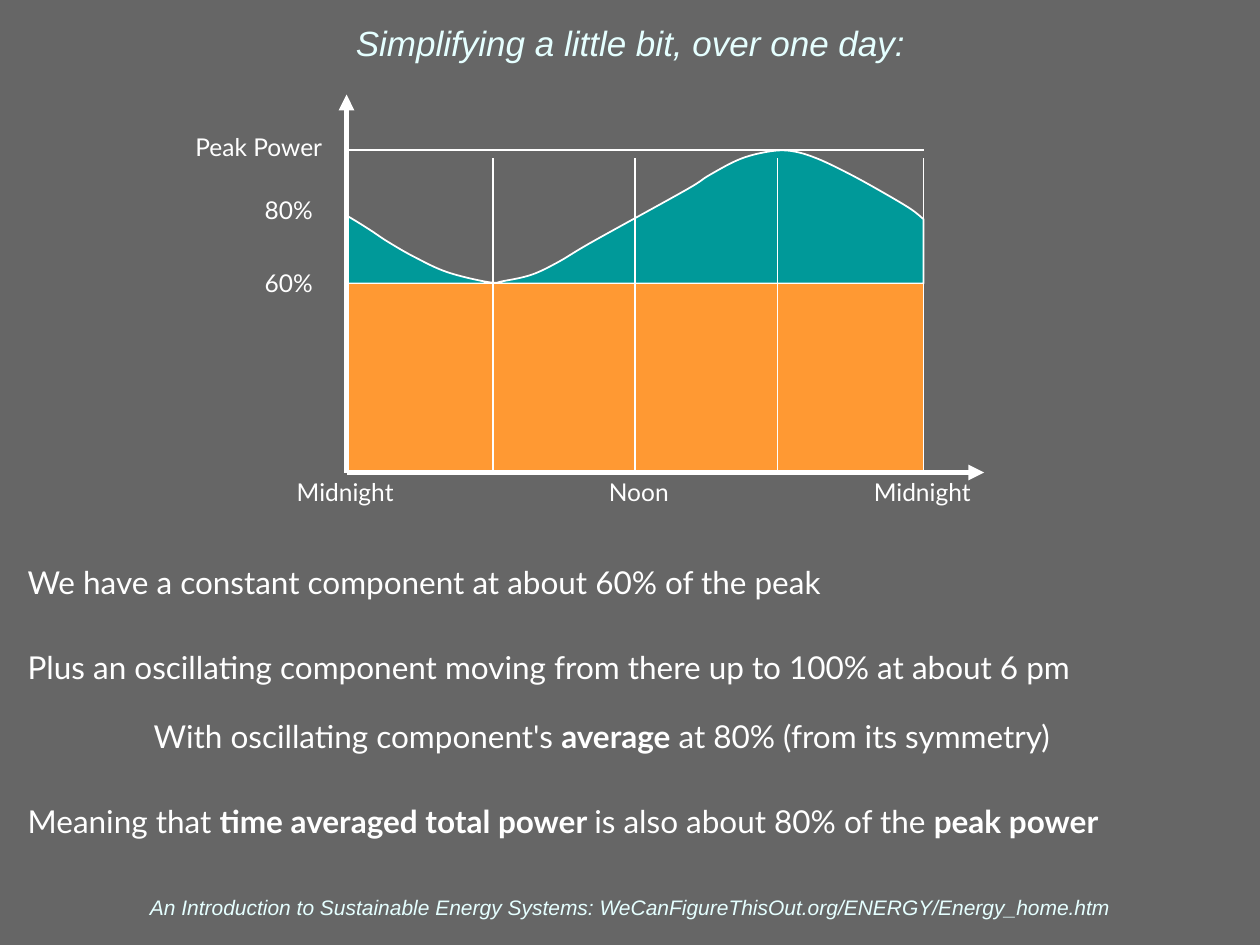
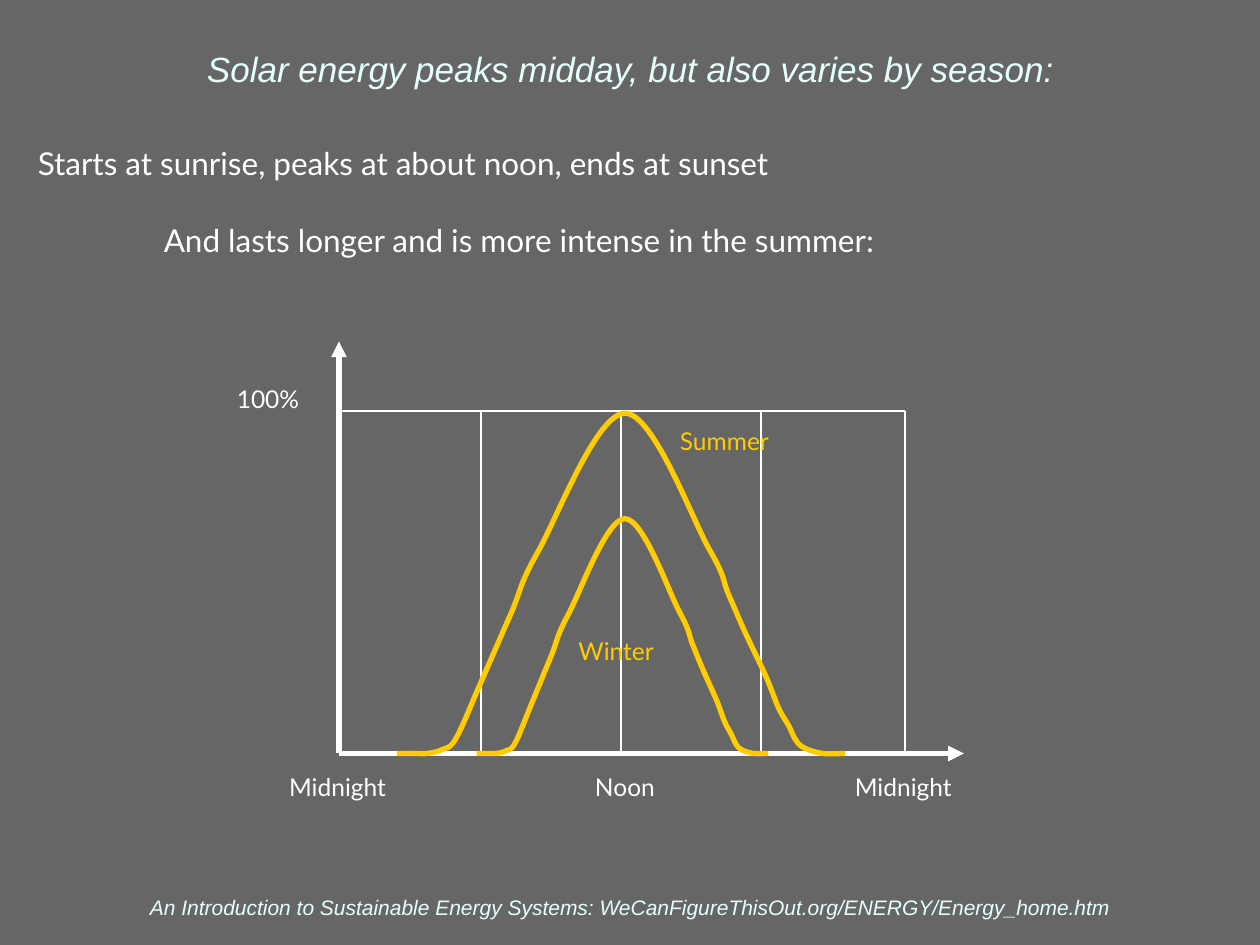
"""Build two slides on daily power demand and solar supply."""
import lxml.etree
import pptx
import pptx.dml.color
import pptx.enum.shapes
import pptx.enum.text
import pptx.oxml.ns
import pptx.util

Inches = pptx.util.Inches
Pt = pptx.util.Pt
ALIGN = pptx.enum.text.PP_ALIGN
ANCHOR = pptx.enum.text.MSO_ANCHOR
qn = pptx.oxml.ns.qn

COLORS = {
    "background": "666666",
    "heading": "E5FFFF",
    "white": "FFFFFF",
    "oscillating": "009999",
    "constant": "FF9933",
    "sun": "FFCC00",
}
FOOTER = ("An Introduction to Sustainable Energy Systems: "
          "WeCanFigureThisOut.org/ENERGY/Energy_home.htm")

DEMAND = [
    (2.75, 1.71), (2.85, 1.77), (2.96, 1.84), (3.08, 1.92), (3.29, 2.04),
    (3.55, 2.16), (3.88, 2.24), (4, 2.23), (4.22, 2.18), (4.43, 2.08),
    (4.7, 1.92), (5.44, 1.51), (5.63, 1.39), (5.88, 1.26), (6.12, 1.2),
    (6.29, 1.2), (6.49, 1.26), (6.76, 1.39), (7.03, 1.54), (7.23, 1.66),
    (7.33, 1.74),
]
NOON, GROUND = 4.96, 5.98
SUMMER = [
    (3.15, 5.98), (3.3, 5.98), (3.39, 5.98), (3.51, 5.95), (3.62, 5.86),
    (3.82, 5.41), (4.06, 4.86), (4.27, 4.38), (4.96, 3.28), (5.63, 4.36),
    (5.78, 4.71), (5.91, 5.01), (6.08, 5.37), (6.18, 5.62), (6.26, 5.76),
    (6.32, 5.88), (6.39, 5.94), (6.53, 5.98), (6.71, 5.98),
]
WINTER = [(NOON + (x - NOON) * 0.65, GROUND + (y - GROUND) * 0.69)
          for x, y in SUMMER]


def rgb(name):
    """Return the named colour."""
    return pptx.dml.color.RGBColor.from_string(COLORS[name])


def style_font(font, size, color="white", name="Lato", italic=None):
    """Set the look of a font."""
    font.size, font.name, font.italic = Pt(size), name, italic
    font.color.rgb = rgb(color)


def add_text_frame(s, x, y, w, h, anchor=ANCHOR.TOP):
    """Add a wrapping text box with narrow margins and return its frame."""
    tf = s.shapes.add_textbox(*map(Inches, (x, y, w, h))).text_frame
    tf.word_wrap = True
    tf.vertical_anchor = anchor
    tf.margin_left = tf.margin_right = Inches(0.05)
    tf.margin_top = tf.margin_bottom = Inches(0.05)
    return tf


def add_heading(s, text, y, h, size, anchor):
    """Add a centred italic line across the slide."""
    p = add_text_frame(s, 0.34, y, 9.33, h, anchor).paragraphs[0]
    p.text, p.alignment = text, ALIGN.CENTER
    style_font(p.font, size, "heading", "Arial", True)


def add_slide(prs, title, title_height):
    """Add a slide with the shared background, footer and title."""
    s = prs.slides.add_slide(prs.slide_layouts[6])
    s.background.fill.solid()
    s.background.fill.fore_color.rgb = rgb("background")
    add_heading(s, FOOTER, 7.06, 0.29, 12, ANCHOR.BOTTOM)
    add_heading(s, title, 0.08, title_height, 20, ANCHOR.MIDDLE)
    return s


def add_body(s, x, y, w, h, items):
    """Add (text, space before, indent) paragraphs; *stars* mark bold."""
    tf = add_text_frame(s, x, y, w, h)
    for i, (text, space, indent) in enumerate(items):
        p = tf.paragraphs[0] if i == 0 else tf.add_paragraph()
        p.space_before = Pt(space)
        p._p.get_or_add_pPr().set("marL", str(Inches(indent)))
        style_font(p.font, 18)
        for j, part in enumerate(text.split("*")):
            if part:
                r = p.add_run()
                r.text = part
                if j % 2:
                    r.font.bold = True


def add_label(s, text, x, y, color="white", w=1.25, align=ALIGN.LEFT):
    """Add a chart label with its left edge at x."""
    p = add_text_frame(s, x, y, w, 0.34).paragraphs[0]
    p.text, p.alignment = text, align
    style_font(p.font, 14, color)


def add_centered_label(s, text, center, y, color="white"):
    """Add a chart label centred on a horizontal position."""
    add_label(s, text, center - 0.62, y, color, 1.24, ALIGN.CENTER)


def add_line(s, x1, y1, x2, y2, width=1, arrow=False):
    """Add a white straight line, with an arrowhead if asked."""
    line = s.shapes.add_connector(pptx.enum.shapes.MSO_CONNECTOR.STRAIGHT,
                                  *map(Inches, (x1, y1, x2, y2)))
    line.line.color.rgb = rgb("white")
    line.line.width = Pt(width)
    if arrow:
        lxml.etree.SubElement(line.line._get_or_add_ln(), qn("a:tailEnd"),
                              type="triangle")
    lxml.etree.SubElement(line._element.spPr, qn("a:effectLst"))


def add_axes(s, x, y, right, top):
    """Add the two arrows that meet at (x, y)."""
    add_line(s, x, y, right, y, 3, True)
    add_line(s, x, y, x, top, 3, True)


def add_grid(s, xs, top, bottom, left, levels):
    """Add upright lines at xs and level lines from left to the last x."""
    for x in xs:
        add_line(s, x, bottom, x, top)
    for y in levels:
        add_line(s, left, y, xs[-1], y)


def add_hours(s, centers, y):
    """Label the time axis from midnight to midnight."""
    for text, center in zip(("Midnight", "Noon", "Midnight"), centers):
        add_centered_label(s, text, center, y)


def paint(shape, fill, line, width):
    """Set fill and outline, and drop the shadow."""
    shape.shadow.inherit = False
    if fill:
        shape.fill.solid()
        shape.fill.fore_color.rgb = rgb(fill)
    else:
        shape.fill.background()
    shape.line.color.rgb = rgb(line)
    shape.line.width = Pt(width)


def bend(shape, count):
    """Turn the segments joining the first count points into smooth curves."""
    points = [(int(pt.get("x")), int(pt.get("y")))
              for pt in shape._element.iter(qn("a:pt"))][:count]
    ends = [points[0], *points, points[-1]]
    segments = list(shape._element.iter(qn("a:lnTo")))
    for segment, a, b, c, d in zip(segments, ends, ends[1:], ends[2:],
                                   ends[3:]):
        leave = [q + (r - p) / 6 for p, q, r in zip(a, b, c)]
        arrive = [q - (r - p) / 6 for p, q, r in zip(b, c, d)]
        segment.tag = qn("a:cubicBezTo")
        for i, (x, y) in enumerate((leave, arrive)):
            pt = lxml.etree.Element(qn("a:pt"), x=str(round(x)),
                                    y=str(round(y)))
            segment.insert(i, pt)


def add_curve(s, knots, line, width, fill=None, corners=()):
    """Draw a smooth curve, closed through straight corners when filled."""
    points = [(Inches(x), Inches(y)) for x, y in (*knots, *corners)]
    builder = s.shapes.build_freeform(*points[0])
    builder.add_line_segments(points[1:], close=bool(fill))
    shape = builder.convert_to_shape()
    bend(shape, len(knots))
    paint(shape, fill, line, width)


def add_demand_slide(prs):
    """Show constant and oscillating demand over one day."""
    s = add_slide(prs, "Simplifying a little bit, over one day:", 0.51)
    add_body(s, 0.17, 4.42, 9.83, 2.57, [
        ("We have a constant component at about 60% of the peak", 0, 0),
        ("Plus an oscillating component moving from there up to 100% "
         "at about 6 pm", 27, 0),
        ("With oscillating component's *average* at 80% "
         "(from its symmetry)", 17.6, 1),
        ("Meaning that *time averaged total power *is also about 80% "
         "of the *peak power*", 27, 0),
    ])
    left, right, base, bottom = 2.75, 7.33, 2.25, 3.75
    add_curve(s, DEMAND, "white", 1, "oscillating",
              [(right, base), (left, base)])
    constant = s.shapes.add_shape(
        pptx.enum.shapes.MSO_SHAPE.RECTANGLE,
        *map(Inches, (left, base, right - left, bottom - base)))
    paint(constant, "constant", "white", 1)
    add_axes(s, left, bottom, 7.81, 0.75)
    add_grid(s, (3.91, 5.04, 6.17, right), 1.25, bottom, left, (base, 1.19))
    add_label(s, "Peak Power", 1.5, 1)
    add_label(s, "80%", 2.05, 1.5, w=0.75)
    add_label(s, "60%", 2.05, 2.08, w=0.75)
    add_hours(s, (2.74, 5.07, 7.32), 3.74)


def add_solar_slide(prs):
    """Compare summer and winter sun over one day."""
    s = add_slide(
        prs, "Solar energy peaks midday, but also varies by season:", 0.92)
    add_body(s, 0.25, 1.09, 9.33, 1.2, [
        ("Starts at sunrise, peaks at about noon, ends at sunset", 0, 0),
        ("And lasts longer and is more intense in the summer:", 22.4, 1),
    ])
    left, top = 2.69, 3.26
    add_label(s, "100%", 1.83, 3, w=0.94)
    add_axes(s, left, GROUND, 7.65, 2.71)
    add_grid(s, (3.82, 4.93, 6.04, 7.18), top, GROUND, left, (top,))
    add_hours(s, (2.68, 4.96, 7.17), 6.08)
    for knots in (SUMMER, WINTER):
        add_curve(s, knots, "sun", 3)
    add_centered_label(s, "Summer", 5.75, 3.33, "sun")
    add_centered_label(s, "Winter", 4.89, 5, "sun")


def main():
    """Build and save the presentation."""
    prs = pptx.Presentation()
    prs.slide_width, prs.slide_height = Inches(10), Inches(7.5)
    add_demand_slide(prs)
    add_solar_slide(prs)
    prs.save("out.pptx")


if __name__ == "__main__":
    main()
